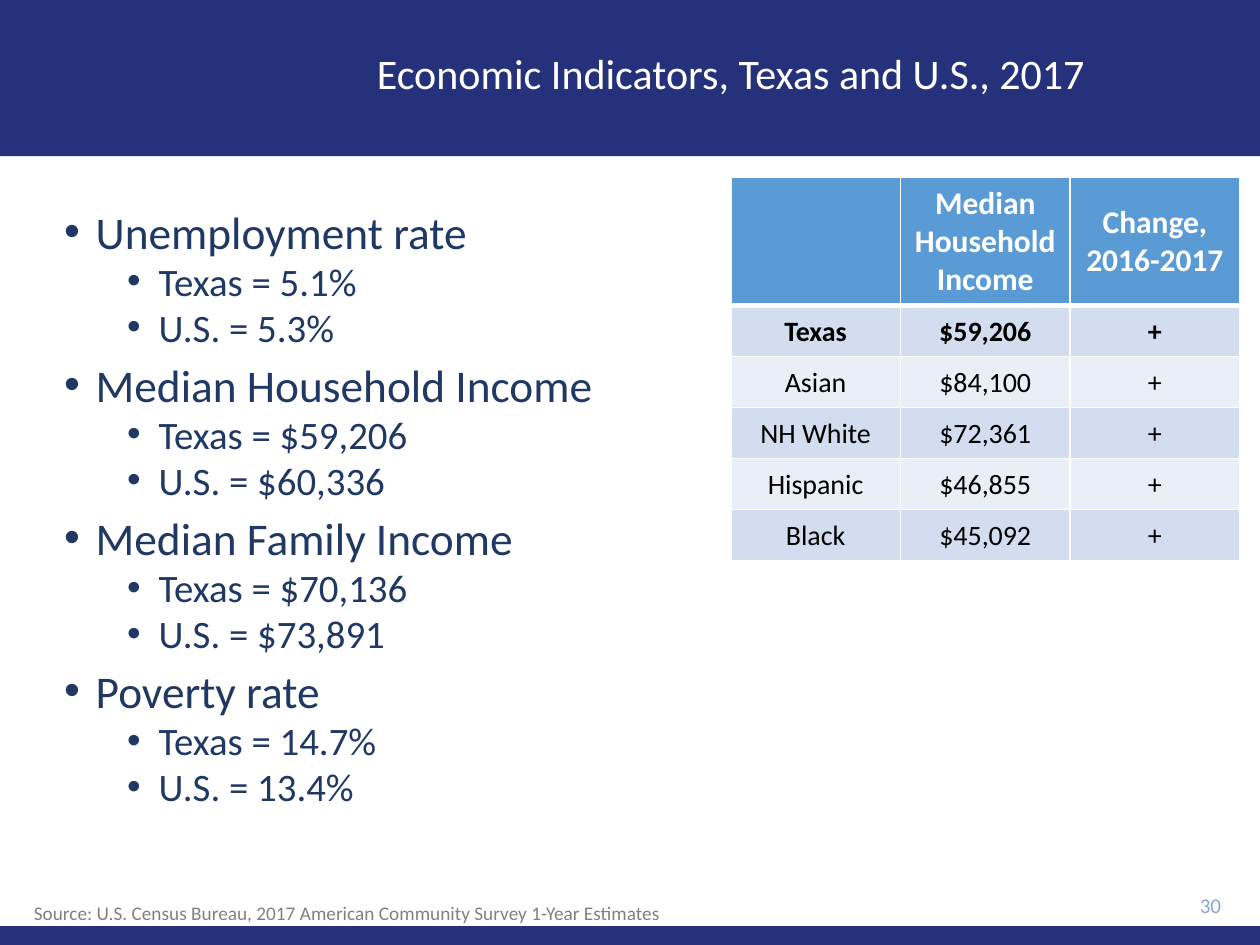
from lxml import etree
from pptx import Presentation
from pptx.dml.color import RGBColor
from pptx.enum.shapes import MSO_SHAPE
from pptx.enum.text import MSO_ANCHOR, MSO_AUTO_SIZE, PP_ALIGN
from pptx.oxml.ns import qn
from pptx.util import Inches, Pt

NAVY = RGBColor(0x25, 0x32, 0x7B)
TEXT_BLUE = RGBColor(0x20, 0x38, 0x64)
HEADER_BLUE = RGBColor(0x5B, 0x9B, 0xD5)
BAND_DARK = RGBColor(0xD2, 0xDE, 0xEF)
BAND_LIGHT = RGBColor(0xEA, 0xEF, 0xF7)
PAGE_BLUE = RGBColor(0x8F, 0xA5, 0xD1)
GRAY = RGBColor(0x80, 0x80, 0x80)
BLACK = RGBColor(0, 0, 0)
WHITE = RGBColor(0xFF, 0xFF, 0xFF)

RECTANGLE = MSO_SHAPE.RECTANGLE
MIDDLE, TOP = MSO_ANCHOR.MIDDLE, MSO_ANCHOR.TOP
LEFT, CENTER, RIGHT = PP_ALIGN.LEFT, PP_ALIGN.CENTER, PP_ALIGN.RIGHT
NO_FIT, GROW = MSO_AUTO_SIZE.NONE, MSO_AUTO_SIZE.SHAPE_TO_FIT_TEXT
FONT = "Calibri"

INDICATORS = [
    ("Unemployment rate", "5.1%", "5.3%"),
    ("Median Household Income", "$59,206", "$60,336"),
    ("Median Family Income", "$70,136", "$73,891"),
    ("Poverty rate", "14.7%", "13.4%"),
]
INCOME_ROWS = [
    ("", "Median Household Income", "Change, 2016-2017"),
    ("Texas", "$59,206", "+"),
    ("Asian", "$84,100", "+"),
    ("NH White", "$72,361", "+"),
    ("Hispanic", "$46,855", "+"),
    ("Black", "$45,092", "+"),
]


def place(shape, box):
    shape.left, shape.top, shape.width, shape.height = map(Inches, box)


def write(paragraph, text, size, color, align=LEFT, bold=False):
    paragraph.alignment = align
    run = paragraph.add_run()
    run.text = text
    font = run.font
    font.name, font.size, font.bold = FONT, Pt(size), bold
    font.color.rgb = color


def add_band(slide, box):
    band = slide.shapes.add_shape(RECTANGLE, *map(Inches, box))
    band.shadow.inherit = False
    band.fill.solid()
    band.fill.fore_color.rgb = NAVY
    band.line.fill.background()
    # Send behind the placeholders
    band.element.getparent().insert(2, band.element)


def fill_title(title, box):
    place(title, box)
    frame = title.text_frame
    frame.auto_size = NO_FIT
    frame.vertical_anchor = MIDDLE
    paragraph = frame.paragraphs[0]
    paragraph.line_spacing = 0.9
    write(paragraph, "Economic Indicators, Texas and U.S., 2017", 24, WHITE, CENTER)


def set_bullet(paragraph, indent):
    properties = paragraph._p.get_or_add_pPr()
    properties.set("marL", str(Inches(indent)))
    properties.set("indent", str(Inches(-0.25)))
    font = etree.SubElement(properties, qn("a:buFont"))
    font.set("typeface", "Arial")
    etree.SubElement(properties, qn("a:buChar")).set("char", "•")


def fill_indicators(body, box):
    place(body, box)
    frame = body.text_frame
    frame.auto_size = NO_FIT
    frame.vertical_anchor = TOP
    lines = []
    for name, texas, nation in INDICATORS:
        lines += [(0, name), (1, f"Texas = {texas}"), (1, f"U.S. = {nation}")]
    for index, (level, text) in enumerate(lines):
        paragraph = frame.add_paragraph() if index else frame.paragraphs[0]
        paragraph.level = level
        set_bullet(paragraph, 0.75 if level else 0.25)
        paragraph.line_spacing = 0.8
        paragraph.space_before = Pt((5 if level else 10) if index else 0)
        write(paragraph, text, 22.2 if level else 25.9, TEXT_BLUE)


def set_borders(cell, widths):
    properties = cell._tc.get_or_add_tcPr()
    for side, width in zip("LRTB", widths):
        line = etree.SubElement(properties, qn(f"a:ln{side}"))
        line.set("w", str(Pt(width)))
        fill = etree.SubElement(line, qn("a:solidFill"))
        etree.SubElement(fill, qn("a:srgbClr")).set("val", str(WHITE))


def add_income_table(slide, box):
    row_count, column_count = len(INCOME_ROWS), len(INCOME_ROWS[0])
    table = slide.shapes.add_table(row_count, column_count, *map(Inches, box)).table
    header_height, row_height = 1.01, 0.405
    for column in table.columns:
        column.width = Inches(box[2] / column_count)
    for row_index, values in enumerate(INCOME_ROWS):
        header = row_index == 0
        table.rows[row_index].height = Inches(header_height if header else row_height)
        for column_index, text in enumerate(values):
            cell = table.cell(row_index, column_index)
            # A heavier rule separates the header from the first row
            set_borders(cell, (1, 1, 3 if row_index == 1 else 1, 3 if header else 1))
            cell.fill.solid()
            band = BAND_DARK if row_index % 2 else BAND_LIGHT
            cell.fill.fore_color.rgb = HEADER_BLUE if header else band
            cell.vertical_anchor = MIDDLE
            if not header:
                cell.margin_left = cell.margin_right = cell.margin_top = Inches(0.01)
                cell.margin_bottom = 0
            if text:
                write(cell.text_frame.paragraphs[0], text, 18 if header else 16,
                      WHITE if header else BLACK, CENTER, bold=row_index < 2)


def add_label(slide, box, text, size, color, align=LEFT, anchor=TOP, wrap=True):
    label = slide.shapes.add_textbox(*map(Inches, box))
    frame = label.text_frame
    frame.word_wrap = wrap
    frame.auto_size = NO_FIT if wrap else GROW
    frame.vertical_anchor = anchor
    write(frame.paragraphs[0], text, size, color, align)


def main():
    presentation = Presentation()
    presentation.slide_width, presentation.slide_height = Inches(10), Inches(7.5)
    slide = presentation.slides.add_slide(presentation.slide_layouts[1])

    # Top and bottom bands
    add_band(slide, (0, 0, 10, 1.24))
    add_band(slide, (0, 7.35, 10, 0.15))

    # Title, indicator list and income table
    fill_title(slide.shapes.title, (1.7, 0.1, 8.2, 1))
    fill_indicators(slide.placeholders[1], (0.41, 1.65, 9.25, 5.1))
    add_income_table(slide, (5.8, 1.41, 4.04, 3.03))

    # Page number and source
    add_label(slide, (8.9, 7.01, 0.89, 0.34), "30", 12, PAGE_BLUE, RIGHT, MIDDLE)
    add_label(slide, (0.17, 7.1, 5.24, 0.29),
              "Source: U.S. Census Bureau, 2017 American Community Survey 1-Year Estimates",
              11, GRAY, wrap=False)

    presentation.save("out.pptx")


if __name__ == "__main__":
    main()
